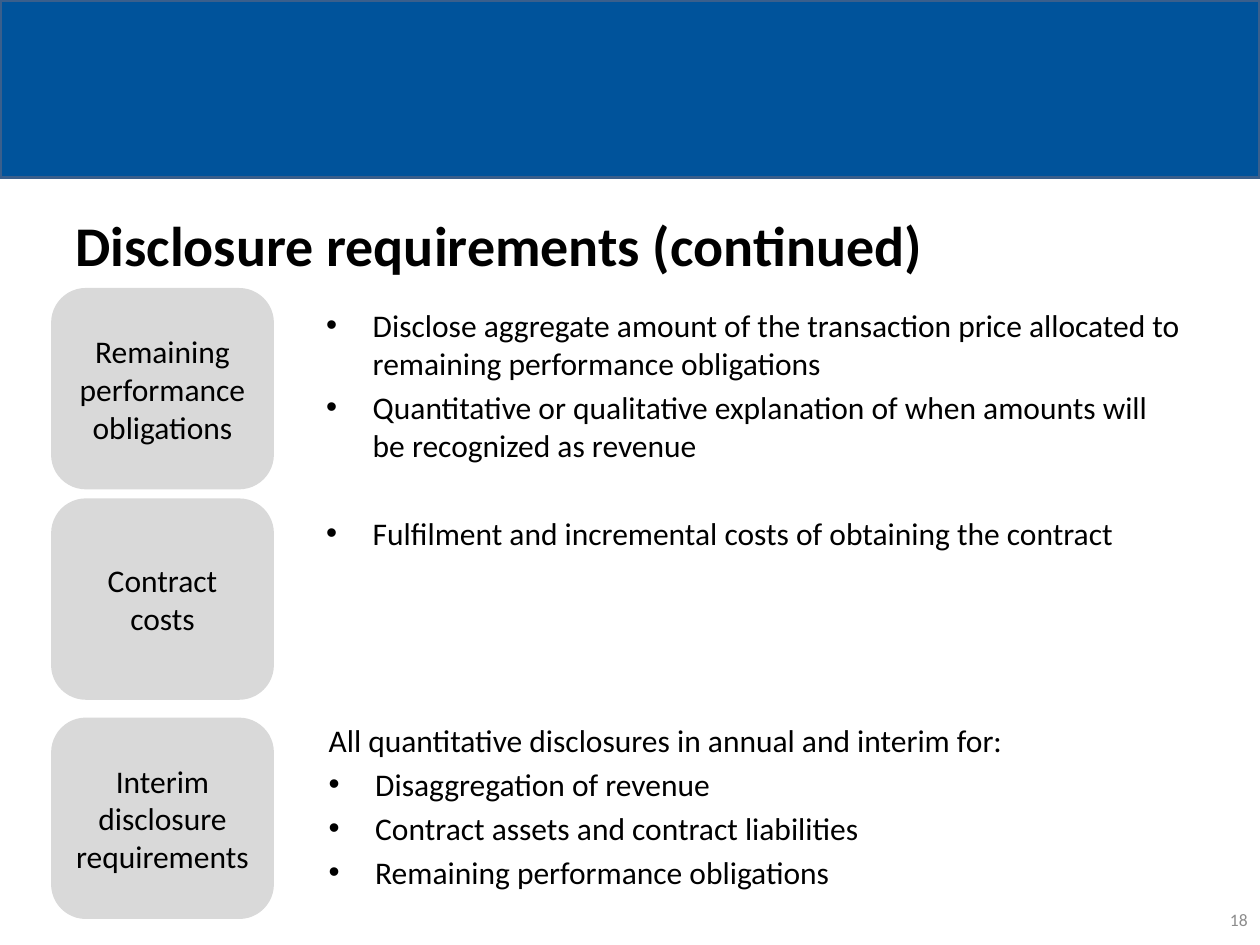
"""Build the slide on continued disclosure requirements."""
from dataclasses import dataclass

import lxml.etree
import pptx
import pptx.dml.color
import pptx.enum.shapes
import pptx.enum.text
import pptx.oxml.ns
import pptx.util

Inches = pptx.util.Inches
Pt = pptx.util.Pt
Shape = pptx.enum.shapes.MSO_SHAPE
Align = pptx.enum.text.PP_ALIGN
Anchor = pptx.enum.text.MSO_ANCHOR

FONT = "Calibri"
BLACK = "000000"
GREY = "D9D9D9"
INDENT = 0.37


@dataclass
class Box:
    left: float
    top: float
    width: float
    height: float

    def emu(self):
        return [Inches(v) for v in (self.left, self.top, self.width, self.height)]


@dataclass
class Topic:
    label: str
    label_top: float
    body: Box
    bullets: list[str]
    intro: str = ""


TOPICS = [
    Topic("Remaining performance obligations", 2.3, Box(2.49, 2.38, 7, 1.7), [
        "Disclose aggregate amount of the transaction price allocated to "
        "remaining performance obligations",
        "Quantitative or qualitative explanation of when amounts will "
        "be recognized as revenue",
    ]),
    Topic("Contract costs", 3.97, Box(2.49, 4.03, 7, 0.59), [
        "Fulfilment and incremental costs of obtaining the contract",
    ]),
    Topic("Interim disclosure requirements", 5.71, Box(2.51, 5.67, 7, 1.81), [
        "Disaggregation of revenue",
        "Contract assets and contract liabilities",
        "Remaining performance obligations",
    ], "All quantitative disclosures in annual and interim for:"),
]


def rgb(value: str):
    return pptx.dml.color.RGBColor.from_string(value)


def style(p, size: float, color: str = BLACK, bold: bool = False) -> None:
    for r in p.runs:
        r.font.name = FONT
        r.font.size = Pt(size)
        r.font.bold = bold
        r.font.color.rgb = rgb(color)


def add_bullet(p) -> None:
    pPr = p._p.get_or_add_pPr()
    pPr.set("marL", str(Inches(INDENT)))
    pPr.set("indent", str(-Inches(INDENT)))
    qn = pptx.oxml.ns.qn
    lxml.etree.SubElement(pPr, qn("a:buFont")).set("typeface", "Arial")
    lxml.etree.SubElement(pPr, qn("a:buChar")).set("char", "•")


def add_panel(s, kind, box: Box, fill: str, line: str):
    sp = s.shapes.add_shape(kind, *box.emu())
    sp.shadow.inherit = False
    sp.fill.solid()
    sp.fill.fore_color.rgb = rgb(fill)
    sp.line.color.rgb = rgb(line)
    sp.line.width = Pt(2)
    return sp


def add_text_box(s, box: Box, anchor=Anchor.TOP):
    tf = s.shapes.add_textbox(*box.emu()).text_frame
    tf.word_wrap = True
    tf.vertical_anchor = anchor
    return tf


def add_line(s, box: Box, text: str, size: float, color: str, bold: bool, align) -> None:
    tf = add_text_box(s, box, Anchor.MIDDLE)
    tf.text = text
    p = tf.paragraphs[0]
    p.alignment = align
    style(p, size, color, bold)


def add_topic(s, topic: Topic) -> None:
    sp = add_panel(s, Shape.ROUNDED_RECTANGLE, Box(0.42, topic.label_top, 1.74, 1.57), GREY, GREY)
    tf = sp.text_frame
    tf.text = topic.label
    tf.word_wrap = True
    tf.vertical_anchor = Anchor.MIDDLE
    tf.paragraphs[0].alignment = Align.CENTER
    style(tf.paragraphs[0], 18)

    tf = add_text_box(s, topic.body)
    lines = [topic.intro] * bool(topic.intro) + topic.bullets
    tf.text = "\n".join(lines)
    for i, p in enumerate(tf.paragraphs):
        if i:
            p.space_before = Pt(3.6)
        if lines[i] != topic.intro:
            add_bullet(p)
        style(p, 18)


def main() -> None:
    prs = pptx.Presentation()
    prs.slide_width, prs.slide_height = Inches(10), Inches(7.5)
    s = prs.slides.add_slide(prs.slide_layouts[6])
    add_panel(s, Shape.RECTANGLE, Box(0, 0, 10, 1.41), "00539B", "3A5F8C")
    add_line(s, Box(0.5, 1.58, 9, 0.72), "Disclosure requirements (continued)",
             32, BLACK, True, Align.LEFT)
    for topic in TOPICS:
        add_topic(s, topic)
    add_line(s, Box(7.67, 7.1, 2.33, 0.4), "18", 10, "8C8C8C", False, Align.RIGHT)
    prs.save("out.pptx")


if __name__ == "__main__":
    main()
